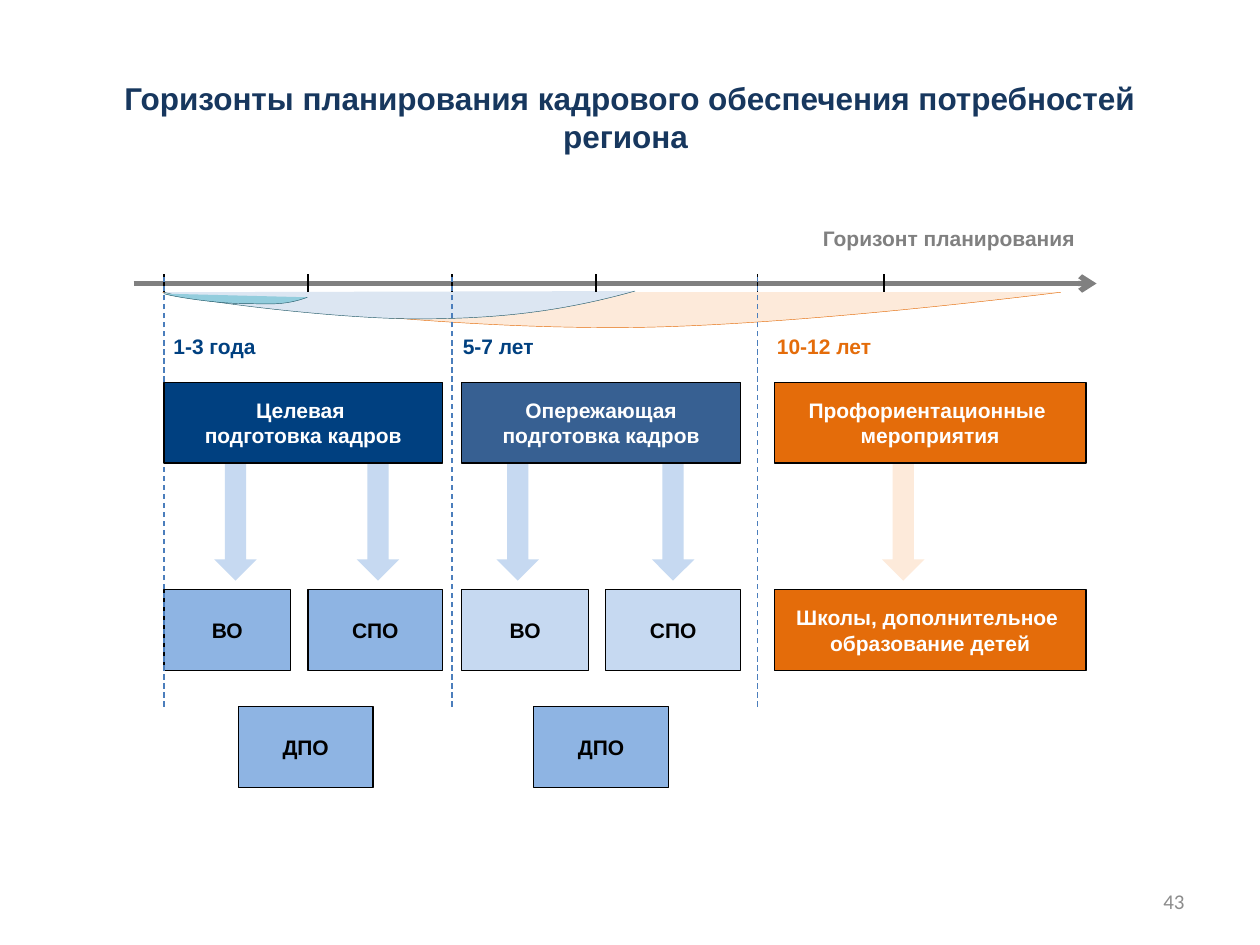
import pptx
import pptx.util
import pptx.dml.color
import pptx.enum.dml
import pptx.enum.shapes
import pptx.enum.text
import pptx.oxml.ns
import lxml.etree

Pt = pptx.util.Pt
RGBColor = pptx.dml.color.RGBColor
SHAPE = pptx.enum.shapes.MSO_SHAPE
ALIGN = pptx.enum.text.PP_ALIGN
ANCHOR = pptx.enum.text.MSO_ANCHOR
DASH = pptx.enum.dml.MSO_LINE.DASH
qn = pptx.oxml.ns.qn

BLACK = RGBColor(0x00, 0x00, 0x00)
WHITE = RGBColor(0xFF, 0xFF, 0xFF)
GRAY = RGBColor(0x80, 0x80, 0x80)
PAGE_GRAY = RGBColor(0x8C, 0x8C, 0x8C)
TITLE_BLUE = RGBColor(0x17, 0x37, 0x5E)
NAVY = RGBColor(0x00, 0x40, 0x80)
STEEL = RGBColor(0x37, 0x60, 0x92)
SKY = RGBColor(0x8E, 0xB4, 0xE3)
PALE_BLUE = RGBColor(0xC6, 0xD9, 0xF1)
MIST = RGBColor(0xDC, 0xE6, 0xF2)
AQUA = RGBColor(0x93, 0xCD, 0xDD)
TEAL = RGBColor(0x21, 0x59, 0x68)
DASH_BLUE = RGBColor(0x4B, 0x7E, 0xBC)
ORANGE = RGBColor(0xE4, 0x6C, 0x0A)
PEACH = RGBColor(0xFD, 0xEA, 0xDA)

BOX_HEIGHT = 46.2
PROGRAM_TOP, LEVEL_TOP, EXTRA_TOP = 218.4, 337, 403.8
BOUNDARIES = (93.7, 258.3, 432.7)
COLUMNS = (93.7, 263.9, 442.4)
STEP = 82.3
HALF_WIDTHS = (72.3, 77)

LONG_WAVE = [(92.9, 167), (178.6, 178.6), (265.7, 187.2), (351.4, 187.2),
             (436.3, 187.2), (564.5, 172.1), (606.2, 167)]
MIDDLE_WAVE = [(362.9, 166.3), (319, 178.6), (282.2, 182.2), (238.3, 182.2),
               (194.4, 182.2), (114.5, 172.8), (93.6, 167)]
SHORT_WAVE = [(175.7, 169.9), (162, 175), (152.6, 173.5), (139, 173.5),
              (125.3, 173.5), (100.1, 169.9), (93.6, 167.8)]


def write(frame, text, color, size=12, font="Arial", bold=True, align=ALIGN.CENTER):
    """Fill a text frame with evenly formatted paragraphs."""
    frame.text = text
    for paragraph in frame.paragraphs:
        paragraph.alignment = align
        paragraph.font.size = Pt(size)
        paragraph.font.name = font
        paragraph.font.bold = bold
        paragraph.font.color.rgb = color


def set_margins(frame):
    """Apply the insets shared by labels and boxes."""
    frame.margin_left = frame.margin_right = Pt(6.5)
    frame.margin_top = frame.margin_bottom = Pt(3.2)


def add_title(slide, text):
    """Place and format the slide title."""
    title = slide.shapes.title
    title.left, title.top, title.width, title.height = Pt(36), Pt(21.6), Pt(648), Pt(90)
    title.text_frame.vertical_anchor = ANCHOR.MIDDLE
    write(title.text_frame, text, TITLE_BLUE, size=18)


def add_label(slide, left, top, width, text, color, align=ALIGN.LEFT):
    """Add a one-line bold label."""
    label = slide.shapes.add_textbox(Pt(left), Pt(top), Pt(width), Pt(20.9))
    frame = label.text_frame
    frame.word_wrap = False
    frame.auto_size = pptx.enum.text.MSO_AUTO_SIZE.SHAPE_TO_FIT_TEXT
    set_margins(frame)
    write(frame, text, color, align=align)


def add_page_number(slide, text):
    """Add the page number at the lower right."""
    number = slide.shapes.add_textbox(Pt(516), Pt(500.5), Pt(168), Pt(28.8))
    number.text_frame.word_wrap = True
    number.text_frame.vertical_anchor = ANCHOR.MIDDLE
    write(number.text_frame, text, PAGE_GRAY, font="Calibri", bold=False, align=ALIGN.RIGHT)


def add_box(slide, left, top, width, text, fill, color):
    """Add an outlined box with centred text."""
    box = slide.shapes.add_shape(SHAPE.RECTANGLE, Pt(left), Pt(top), Pt(width), Pt(BOX_HEIGHT))
    box.shadow.inherit = False
    box.fill.solid()
    box.fill.fore_color.rgb = fill
    box.line.color.rgb = BLACK
    box.line.width = Pt(0.75)
    frame = box.text_frame
    frame.word_wrap = False
    frame.vertical_anchor = ANCHOR.MIDDLE
    set_margins(frame)
    write(frame, text, color)


def add_down_arrow(slide, left, fill):
    """Add a block arrow from a programme to its education level."""
    arrow = slide.shapes.add_shape(SHAPE.DOWN_ARROW, Pt(left), Pt(260), Pt(24.3), Pt(71.8))
    arrow.shadow.inherit = False
    arrow.fill.solid()
    arrow.fill.fore_color.rgb = fill
    arrow.line.fill.background()


def add_line(slide, start, end, color, width=0.75, dash=None, arrow=False):
    """Add a straight line, optionally dashed or with an arrowhead."""
    line = slide.shapes.add_connector(pptx.enum.shapes.MSO_CONNECTOR.STRAIGHT,
                                      *map(Pt, start + end))
    line.line.color.rgb = color
    line.line.width = Pt(width)
    if dash:
        line.line.dash_style = dash
    if arrow:
        lxml.etree.SubElement(line.line._get_or_add_ln(), qn("a:tailEnd"), type="arrow")
    lxml.etree.SubElement(line._element.spPr, qn("a:effectLst"))


def curve_segments(shape):
    """Turn each three line segments of a freeform into one cubic curve."""
    segments = list(shape._element.iter(qn("a:lnTo")))
    for first in range(0, len(segments), 3):
        group = segments[first:first + 3]
        curve = lxml.etree.Element(qn("a:cubicBezTo"))
        group[0].addprevious(curve)
        for segment in group:
            curve.append(segment[0])
            segment.getparent().remove(segment)


def add_wave(slide, points, fill, outline):
    """Add a filled wave made of two smooth curve segments."""
    builder = slide.shapes.build_freeform(*map(Pt, points[0]))
    builder.add_line_segments([(Pt(x), Pt(y)) for x, y in points[1:]], close=False)
    wave = builder.convert_to_shape()
    curve_segments(wave)
    wave.shadow.inherit = False
    wave.fill.solid()
    wave.fill.fore_color.rgb = fill
    wave.line.color.rgb = outline
    wave.line.width = Pt(0.25)


def main():
    """Build the planning horizons slide."""
    deck = pptx.Presentation()
    deck.slide_width, deck.slide_height = Pt(720), Pt(540)
    slide = deck.slides.add_slide(deck.slide_layouts[5])
    add_title(slide, "Горизонты планирования кадрового обеспечения потребностей региона ")
    add_page_number(slide, "43")

    add_wave(slide, LONG_WAVE, PEACH, ORANGE)
    add_wave(slide, MIDDLE_WAVE, MIST, TEAL)
    add_wave(slide, SHORT_WAVE, AQUA, TEAL)
    add_line(slide, (76.4, 162), (626.6, 162), GRAY, width=3, arrow=True)
    add_label(slide, 462.4, 125.7, 158.4, "Горизонт планирования", GRAY, ALIGN.RIGHT)
    ticks = [BOUNDARIES[0] + STEP * i for i in (0, 1, 2, 3, 5)] + [BOUNDARIES[2]]
    for tick in ticks:
        add_line(slide, (tick, 156.8), (tick, 167), BLACK)

    horizons = [(92.6, 60.5, "1-3 года", NAVY), (258, 55, "5-7 лет", NAVY),
                (437.5, 67, "10-12 лет", ORANGE)]
    for left, width, term, color in horizons:
        add_label(slide, left, 187.4, width, term, color)

    for column, fill in zip(COLUMNS, (SKY, PALE_BLUE)):
        for i, level in enumerate(("ВО", "СПО")):
            add_box(slide, column + STEP * i, LEVEL_TOP, HALF_WIDTHS[i], level, fill, BLACK)
    add_box(slide, COLUMNS[2], LEVEL_TOP, 178.3, "Школы, дополнительное \nобразование детей",
            ORANGE, WHITE)

    for boundary in BOUNDARIES:
        add_line(slide, (boundary, 403.8), (boundary, 156.8), DASH_BLUE, dash=DASH)
    for left in (122.4, 203.8, 283.7, 372.5):
        add_down_arrow(slide, left, PALE_BLUE)
    add_down_arrow(slide, 504, PEACH)

    programs = [(159.3, "Целевая \nподготовка кадров", NAVY),
                (159.3, "Опережающая\nподготовка кадров", STEEL),
                (178.3, "Профориентационные \nмероприятия", ORANGE)]
    for column, (width, program, fill) in zip(COLUMNS, programs):
        add_box(slide, column, PROGRAM_TOP, width, program, fill, WHITE)
    for left in (136.2, 305):
        add_box(slide, left, EXTRA_TOP, HALF_WIDTHS[1], "ДПО", SKY, BLACK)
    deck.save("out.pptx")


if __name__ == "__main__":
    main()
